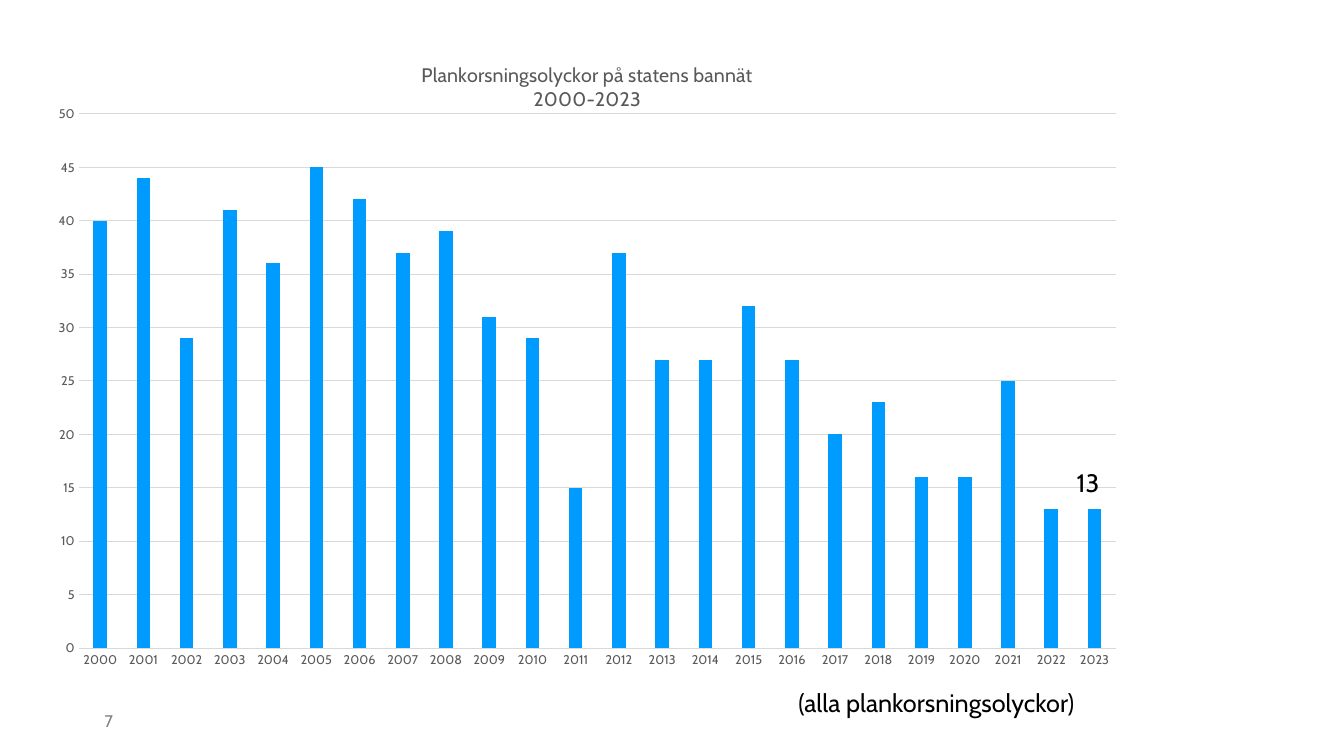
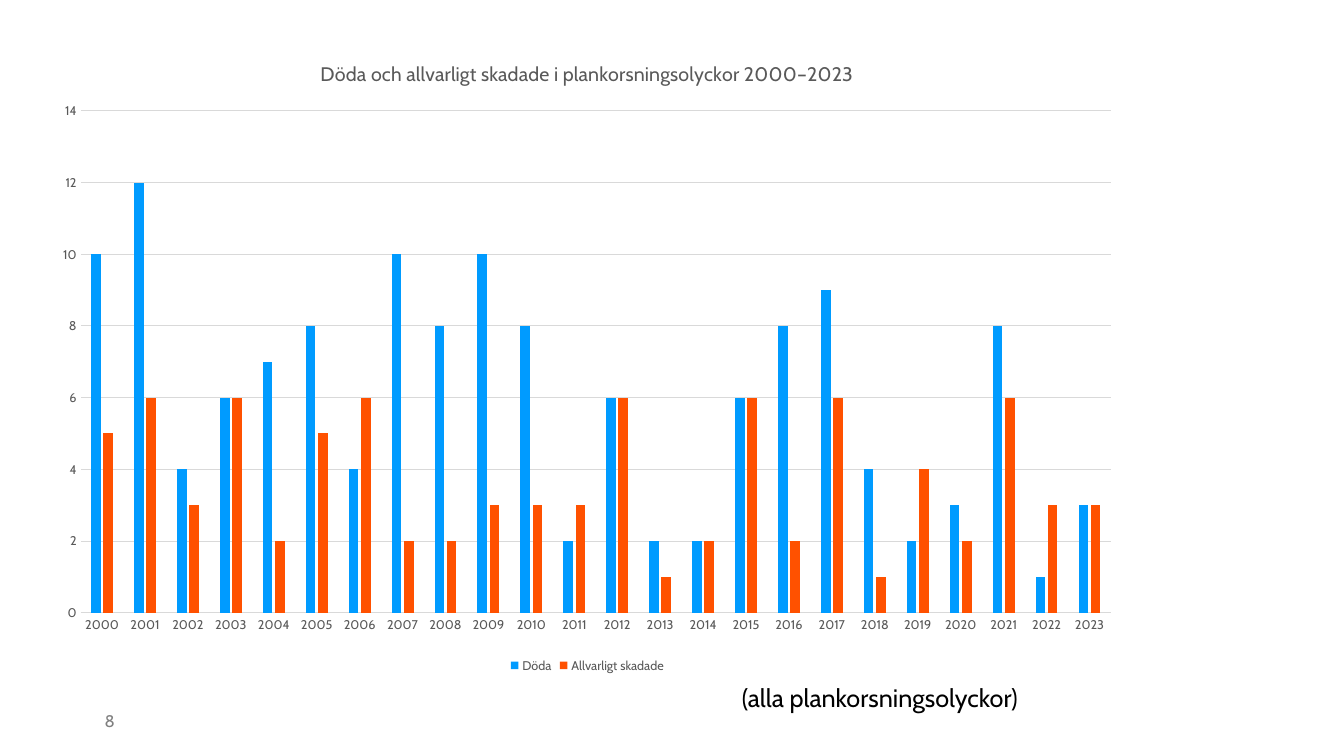
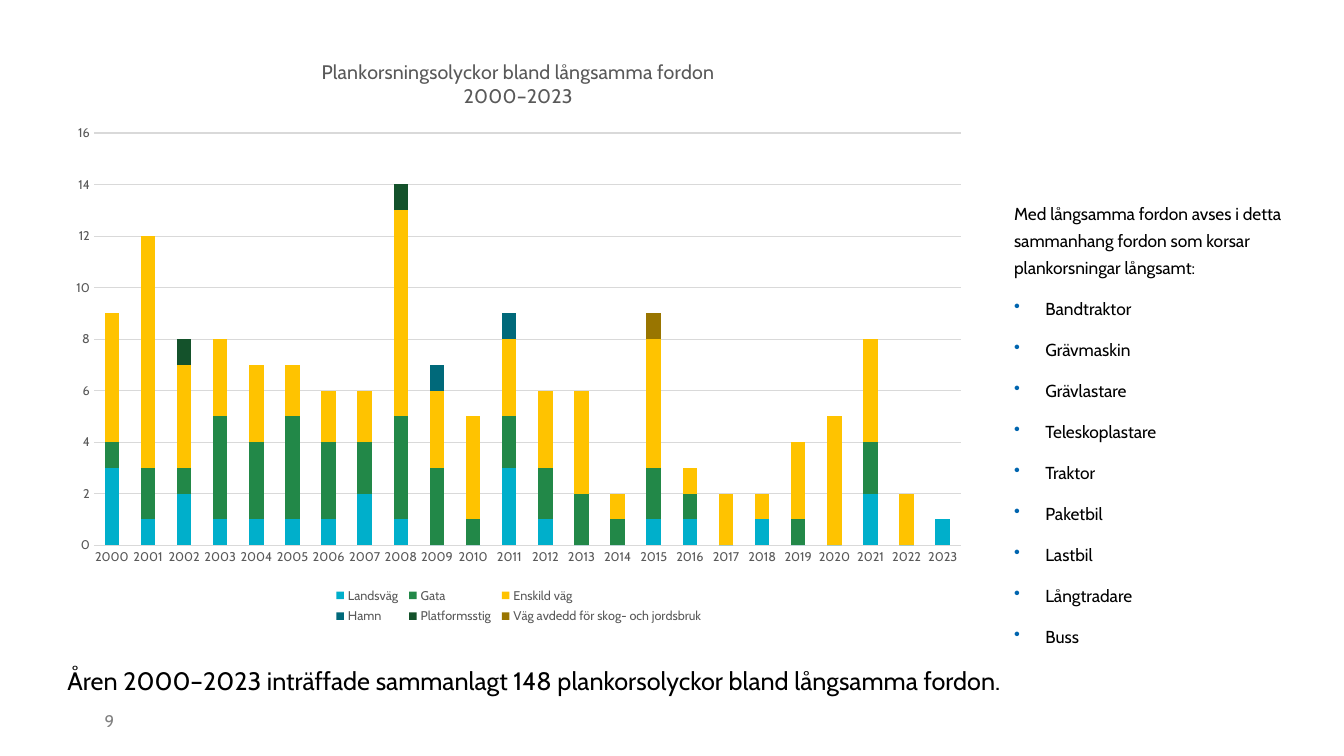
"""Builds three slides with column charts on level crossing accidents, 2000–2023."""
from lxml import etree
from pptx import Presentation
from pptx.chart.data import CategoryChartData
from pptx.dml.color import RGBColor
from pptx.enum.chart import XL_CHART_TYPE, XL_LEGEND_POSITION, XL_TICK_MARK
from pptx.enum.text import MSO_ANCHOR
from pptx.oxml.ns import qn
from pptx.util import Inches, Pt

FONT = "Cabin"
COLOURS = {
    "text": "000000", "number": "808080", "label": "595959", "grid": "D9D9D9",
    "bullet": "0065AF", "blue": "009BFF", "orange": "FF5100", "cyan": "00AFCB",
    "green": "228848", "yellow": "FFC300", "teal": "00697A", "forest": "14522B",
    "olive": "997500",
}
YEARS = [str(year) for year in range(2000, 2024)]
ALL_ACCIDENTS = "(alla plankorsningsolyckor)"

SLIDES = [
    {
        "number": "7",
        "chart": {
            "title": "Plankorsningsolyckor på statens bannät\n2000-2023",
            "kind": XL_CHART_TYPE.COLUMN_CLUSTERED, "gap": 219, "overlap": -27,
            "top_value": 50, "step": 5,
            "box": (0.43, 0.4, 10.79, 6.37), "plot": (0.78, 1.13, 10.29, 5.3),
            "series": [
                ("Series 1", "blue",
                 [40, 44, 29, 41, 36, 45, 42, 37, 39, 31, 29, 15,
                  37, 27, 27, 32, 27, 20, 23, 16, 16, 25, 13, 13]),
            ],
        },
        "captions": [(ALL_ACCIDENTS, (7.82, 6.77, 3.99, 0.4)),
                     ("13", (10.58, 4.59, 0.48, 0.4))],
    },
    {
        "number": "8",
        "chart": {
            "title": "Döda och allvarligt skadade i plankorsningsolyckor 2000–2023",
            "kind": XL_CHART_TYPE.COLUMN_CLUSTERED, "gap": 219, "overlap": -27,
            "top_value": 14, "step": 2,
            "box": (0.41, 0.38, 10.83, 6.34), "plot": (0.8, 1.1, 10.22, 4.98),
            "series": [
                ("Döda", "blue",
                 [10, 12, 4, 6, 7, 8, 4, 10, 8, 10, 8, 2,
                  6, 2, 2, 6, 8, 9, 4, 2, 3, 8, 1, 3]),
                ("Allvarligt skadade", "orange",
                 [5, 6, 3, 6, 2, 5, 6, 2, 2, 3, 3, 3,
                  6, 1, 2, 6, 2, 6, 1, 4, 2, 6, 3, 3]),
            ],
        },
        "captions": [(ALL_ACCIDENTS, (7.26, 6.72, 3.99, 0.4))],
    },
    {
        "number": "9",
        "chart": {
            "title": "Plankorsningsolyckor bland långsamma fordon\n2000–2023",
            "kind": XL_CHART_TYPE.COLUMN_STACKED, "gap": 150, "overlap": 100,
            "top_value": 16, "step": 2,
            "box": (0.57, 0.38, 9.14, 5.86), "plot": (0.93, 1.32, 8.6, 4.09),
            "legend": (3.27, 5.78, 3.75, 0.48),
            "series": [
                ("Landsväg", "cyan",
                 [3, 1, 2, 1, 1, 1, 1, 2, 1, 0, 0, 3,
                  1, 0, 0, 1, 1, 0, 1, 0, 0, 2, 0, 1]),
                ("Gata", "green",
                 [1, 2, 1, 4, 3, 4, 3, 2, 4, 3, 1, 2,
                  2, 2, 1, 2, 1, 0, 0, 1, 0, 2, 0, 0]),
                ("Enskild väg", "yellow",
                 [5, 9, 4, 3, 3, 2, 2, 2, 8, 3, 4, 3,
                  3, 4, 1, 5, 1, 2, 1, 3, 5, 4, 2, 0]),
                ("Hamn", "teal", [int(year in ("2009", "2011")) for year in YEARS]),
                ("Platformsstig", "forest",
                 [int(year in ("2002", "2008")) for year in YEARS]),
                ("Väg avdedd för skog- och jordsbruk", "olive",
                 [int(year == "2015") for year in YEARS]),
            ],
        },
        "captions": [
            ("Åren 2000–2023 inträffade sammanlagt 148 plankorsolyckor "
             "bland långsamma fordon.", (0.57, 6.55, 9.92, 0.4))],
        "vehicles": (
            "Med långsamma fordon avses i detta sammanhang fordon som korsar "
            "plankorsningar långsamt:",
            ["Bandtraktor", "Grävmaskin", "Grävlastare", "Teleskoplastare", "Traktor",
             "Paketbil", "Lastbil", "Långtradare", "Buss"]),
    },
]


def colour(name):
    return RGBColor.from_string(COLOURS[name])


def style_font(font, size, name):
    font.name, font.size, font.bold = FONT, Pt(size), False
    font.color.rgb = colour(name)


def add_text(page, lines, place, size=18, name="text"):
    box = page.shapes.add_textbox(*map(Inches, place))
    frame = box.text_frame
    frame.word_wrap = True
    frame.text = "\n".join(lines)
    for para in frame.paragraphs:
        style_font(para.font, size, name)
    return frame


def add_vehicles(page, intro, vehicles):
    frame = add_text(page, [intro], (9.96, 1.9, 3.37, 4.78), 12.4)
    frame.paragraphs[0].line_spacing = 1.3
    for vehicle in vehicles:
        para = frame.add_paragraph()
        para.text = vehicle
        para.line_spacing, para.space_before = 1.3, Pt(10)
        props = para._p.get_or_add_pPr()
        props.set("marL", str(Inches(0.31)))
        props.set("indent", str(-Inches(0.31)))
        tint = etree.SubElement(props, qn("a:buClr"))
        etree.SubElement(tint, qn("a:srgbClr"), val=COLOURS["bullet"])
        etree.SubElement(props, qn("a:buChar"), char="•")
        style_font(para.font, 12.4, "text")


def make_layout(part, chart_box, inner=False):
    """Returns a manual chart layout for a part placed in slide inches."""
    left, top, width, height = chart_box
    values = {"x": (part[0] - left) / width, "y": (part[1] - top) / height,
              "w": part[2] / width, "h": part[3] / height}
    layout = etree.Element(qn("c:layout"))
    manual = etree.SubElement(layout, qn("c:manualLayout"))
    if inner:
        etree.SubElement(manual, qn("c:layoutTarget"), val="inner")
    for key in "xy":
        etree.SubElement(manual, qn(f"c:{key}Mode"), val="edge")
    for key, value in values.items():
        etree.SubElement(manual, qn(f"c:{key}"), val=f"{value:.4f}")
    return layout


def style_line(line):
    line.color.rgb = colour("grid")
    line.width = Pt(0.75)


def style_axes(chart, top_value, step):
    for axis in (chart.category_axis, chart.value_axis):
        axis.major_tick_mark = axis.minor_tick_mark = XL_TICK_MARK.NONE
        style_font(axis.tick_labels.font, 9, "label")
    style_line(chart.category_axis.format.line)
    values = chart.value_axis
    values.format.line.fill.background()
    values.minimum_scale, values.maximum_scale, values.major_unit = 0, top_value, step
    values.has_major_gridlines = True
    style_line(values.major_gridlines.format.line)


def add_column_chart(page, details):
    data = CategoryChartData()
    data.categories = YEARS
    for name, _, values in details["series"]:
        data.add_series(name, values)
    box = details["box"]
    chart = page.shapes.add_chart(details["kind"], *map(Inches, box), data).chart
    style_font(chart.font, 10, "text")

    chart.has_title = True
    chart.chart_title.text_frame.text = details["title"]
    for para in chart.chart_title.text_frame.paragraphs:
        style_font(para.font, 14, "label")

    style_axes(chart, details["top_value"], details["step"])
    plot = chart.plots[0]
    plot.gap_width, plot.overlap = details["gap"], details["overlap"]
    plot.vary_by_categories = False
    for series, (_, name, _) in zip(plot.series, details["series"]):
        series.format.fill.solid()
        series.format.fill.fore_color.rgb = colour(name)

    area = chart._chartSpace.find(".//" + qn("c:plotArea"))
    for layout in area.findall(qn("c:layout")):
        area.remove(layout)
    area.insert(0, make_layout(details["plot"], box, inner=True))

    chart.has_legend = len(details["series"]) > 1
    if chart.has_legend:
        legend = chart.legend
        legend.position = XL_LEGEND_POSITION.BOTTOM
        legend.include_in_layout = False
        style_font(legend.font, 9, "label")
        if "legend" in details:
            element = legend._element
            for layout in element.findall(qn("c:layout")):
                element.remove(layout)
            element.insert(1, make_layout(details["legend"], box))


def main():
    deck = Presentation()
    deck.slide_width, deck.slide_height = Inches(13.33), Inches(7.5)
    for details in SLIDES:
        page = deck.slides.add_slide(deck.slide_layouts[6])
        number = add_text(page, [details["number"]], (0.94, 6.95, 0.61, 0.4), 12, "number")
        number.vertical_anchor = MSO_ANCHOR.MIDDLE
        add_column_chart(page, details["chart"])
        for caption, place in details["captions"]:
            add_text(page, [caption], place)
        if "vehicles" in details:
            add_vehicles(page, *details["vehicles"])
    deck.save("out.pptx")


if __name__ == "__main__":
    main()
